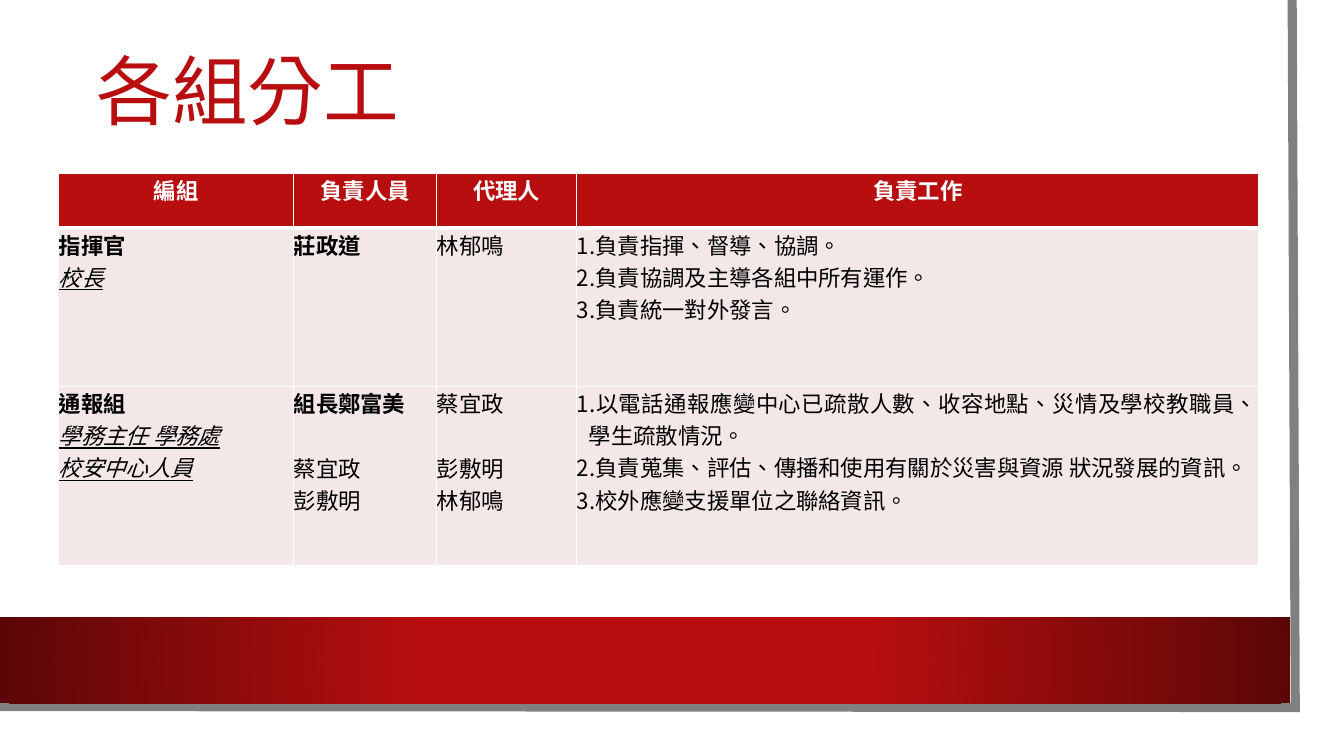
from dataclasses import dataclass

from lxml import etree
from pptx import Presentation
from pptx import util as u
from pptx.dml.color import RGBColor
from pptx.enum import shapes, text
from pptx.oxml import ns

COLORS = {
    "white": "FFFFFF",
    "red": "B80E0F",
    "dark_red": "5C0707",
    "gray": "808080",
    "pink": "F3E7E7",
    "black": "000000",
}
CJK_FONT = "Noto Sans CJK TC"
BODY_FONT = "Times New Roman"
HEADING_FONT = "Arial Narrow"
LINE_GAP = 23.2
HANGING = 8.64

COLUMN_WIDTHS = [167.8, 102.2, 100.1, 487]
ROW_HEIGHTS = [38.9, 113, 128.2]
HEADERS = ["編組", "負責人員", "代理人", "負責工作"]


@dataclass
class Line:
    text: str
    number: str = ""
    bold: bool = False
    role: bool = False
    hanging: bool = False
    gap: float = 0


@dataclass
class Panel:
    left: float
    top: float
    width: float
    height: float
    color: str


def duties(items: list[str], hanging: bool = False) -> list[Line]:
    return [Line(item, number=f"{i}.", hanging=hanging) for i, item in enumerate(items, 1)]


BODY_ROWS = [
    [
        [Line("指揮官", bold=True), Line("校長", role=True)],
        [Line("莊政道", bold=True)],
        [Line("林郁鳴")],
        duties(["負責指揮、督導、協調。", "負責協調及主導各組中所有運作。", "負責統一對外發言。"]),
    ],
    [
        [
            Line("通報組", bold=True),
            Line("學務主任 學務處", role=True),
            Line("校安中心人員", role=True),
        ],
        [
            Line("組長鄭富美", bold=True),
            Line("蔡宜政", hanging=True, gap=LINE_GAP),
            Line("彭敷明"),
        ],
        [Line("蔡宜政", hanging=True), Line("彭敷明", gap=LINE_GAP), Line("林郁鳴")],
        duties(
            [
                "以電話通報應變中心已疏散人數、收容地點、災情及學校教職員、學生疏散情況。",
                "負責蒐集、評估、傳播和使用有關於災害與資源 狀況發展的資訊。",
                "校外應變支援單位之聯絡資訊。",
            ],
            hanging=True,
        ),
    ],
]

PAGE_PANEL = Panel(0, 0, 943.2, 523.4, "white")
BOTTOM_BAND = Panel(0, 441, 921.6, 61.2, "red")
FRAME_POINTS = [(923, 0), (925.2, 505.4), (-2.2, 504.7)]


def rgb(color: str) -> RGBColor:
    return RGBColor.from_string(COLORS[color])


def add_run(paragraph, content: str, font_name: str, color: str, **formats) -> None:
    run = paragraph.add_run()
    run.text = content
    for name, value in {"name": font_name, **formats}.items():
        setattr(run.font, name, value)
    run.font.color.rgb = rgb(color)
    properties = run.font._element
    properties.set("lang", "zh-TW")
    etree.SubElement(properties, ns.qn("a:ea"), typeface=CJK_FONT)


def add_panel(slide, panel: Panel):
    shape = slide.shapes.add_shape(
        shapes.MSO_SHAPE.RECTANGLE,
        u.Pt(panel.left), u.Pt(panel.top), u.Pt(panel.width), u.Pt(panel.height),
    )
    shape.shadow.inherit = False
    shape.fill.solid()
    shape.fill.fore_color.rgb = rgb(panel.color)
    shape.line.fill.background()
    return shape


def apply_radial_gradient(shape, stops: list[tuple[float, str]]) -> None:
    shape.fill.gradient()
    for stop, (position, color) in zip(shape.fill.gradient_stops, stops):
        stop.position = position
        stop.color.rgb = rgb(color)
    gradient = shape._element.spPr.find(ns.qn("a:gradFill"))
    linear = gradient.find(ns.qn("a:lin"))
    radial = etree.Element(ns.qn("a:path"), path="circle")
    center = {side: "50000" for side in "ltrb"}
    etree.SubElement(radial, ns.qn("a:fillToRect"), **center)
    gradient.replace(linear, radial)


def add_frame(slide) -> None:
    points = [(u.Pt(x), u.Pt(y)) for x, y in FRAME_POINTS]
    builder = slide.shapes.build_freeform(*points[0], scale=1.0)
    builder.add_line_segments(points[1:], close=False)
    shape = builder.convert_to_shape()
    shape.shadow.inherit = False
    shape.fill.background()
    shape.line.color.rgb = rgb("gray")
    shape.line.width = u.Pt(6.5)
    outline = shape._element.spPr.find(ns.qn("a:ln"))
    etree.SubElement(outline, ns.qn("a:miter"), lim="800000")


def add_title(slide, content: str) -> None:
    box = slide.shapes.add_textbox(u.Pt(61.9), u.Pt(22.3), u.Pt(818.6), u.Pt(90.7))
    frame = box.text_frame
    frame.word_wrap = True
    frame.vertical_anchor = text.MSO_ANCHOR.MIDDLE
    paragraph = frame.paragraphs[0]
    paragraph.line_spacing = 0.9
    add_run(paragraph, content, HEADING_FONT, "red", size=u.Pt(54))


def format_cell(cell, color: str, top: float, bottom: float) -> None:
    for side in ("left", "top", "right", "bottom"):
        setattr(cell, f"margin_{side}", 0)
    properties = cell._tc.get_or_add_tcPr()
    for tag, width in {"lnL": 1, "lnR": 1, "lnT": top, "lnB": bottom}.items():
        border = etree.SubElement(properties, ns.qn(f"a:{tag}"), w=str(u.Pt(width)))
        fill = etree.SubElement(border, ns.qn("a:solidFill"))
        etree.SubElement(fill, ns.qn("a:srgbClr"), val=COLORS["white"])
    cell.fill.solid()
    cell.fill.fore_color.rgb = rgb(color)


def write_lines(cell, lines: list[Line]) -> None:
    frame = cell.text_frame
    for index, line in enumerate(lines):
        paragraph = frame.add_paragraph() if index else frame.paragraphs[0]
        paragraph.alignment = text.PP_ALIGN.JUSTIFY
        if line.gap:
            paragraph.space_before = u.Pt(line.gap)
        if line.hanging:
            properties = paragraph._p.get_or_add_pPr()
            properties.set("marL", str(u.Pt(HANGING)))
            properties.set("indent", str(-u.Pt(HANGING)))
        if line.number:
            add_run(paragraph, line.number, CJK_FONT, "black", size=u.Pt(16))
        add_run(
            paragraph, line.text, BODY_FONT, "black", size=u.Pt(16),
            bold=line.bold, italic=line.role, underline=line.role,
        )


def add_duty_table(slide) -> None:
    table = slide.shapes.add_table(
        len(ROW_HEIGHTS), len(COLUMN_WIDTHS), u.Pt(42), u.Pt(124.2),
        u.Pt(sum(COLUMN_WIDTHS)), u.Pt(sum(ROW_HEIGHTS)),
    ).table
    for column, width in zip(table.columns, COLUMN_WIDTHS):
        column.width = u.Pt(width)
    for row, height in zip(table.rows, ROW_HEIGHTS):
        row.height = u.Pt(height)
    for cell, header in zip(table.rows[0].cells, HEADERS):
        format_cell(cell, "red", top=1, bottom=3)
        paragraph = cell.text_frame.paragraphs[0]
        paragraph.alignment = text.PP_ALIGN.CENTER
        add_run(paragraph, header, HEADING_FONT, "white", size=u.Pt(16), bold=True)
    for row_index, groups in enumerate(BODY_ROWS, 1):
        for cell, lines in zip(table.rows[row_index].cells, groups):
            format_cell(cell, "pink", top=3 if row_index == 1 else 1, bottom=1)
            write_lines(cell, lines)


def main() -> None:
    presentation = Presentation()
    presentation.slide_width = u.Pt(960)
    presentation.slide_height = u.Pt(540)
    slide = presentation.slides.add_slide(presentation.slide_layouts[6])
    add_panel(slide, PAGE_PANEL)
    add_frame(slide)
    band = add_panel(slide, BOTTOM_BAND)
    apply_radial_gradient(band, [(0.34, "red"), (1, "dark_red")])
    add_title(slide, "各組分工")
    add_duty_table(slide)
    presentation.save("out.pptx")


if __name__ == "__main__":
    main()
